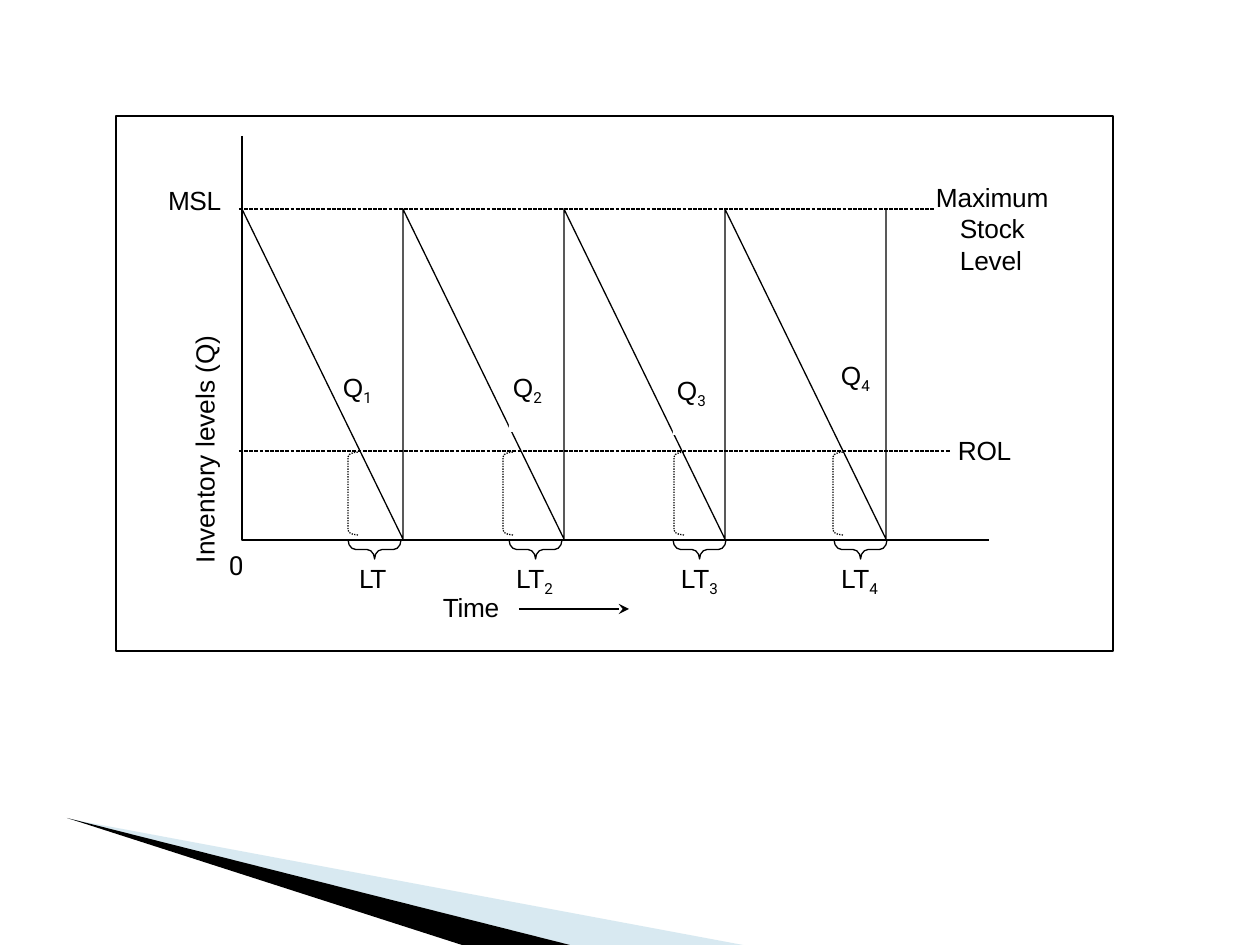
import pptx
import pptx.dml.color
import pptx.enum.dml
import pptx.enum.shapes
import pptx.oxml
import pptx.oxml.ns
import pptx.util

PX = 914400 / 126
COLORS = {"ink": "000000", "paper": "FFFFFF", "wedge": "9FCADC"}
SHAPES = pptx.enum.shapes.MSO_SHAPE
DASH = pptx.enum.dml.MSO_LINE

AXIS_X, AXIS_TOP, AXIS_Y, AXIS_END = 242, 136, 540, 989
PEAK_Y, TROUGH_Y, REORDER_Y = 209, 539, 451
CYCLE, CYCLES = 161, 4
LEAD_WIDTH = 53

# Per cycle: quantity label (x, y), dotted bracket x, lead time brace x,
# lead time label (x, width, subscript)
CYCLE_MARKS = [
    ((339, 368), 348, 348, (359, 29, "")),
    ((509, 368), 503, 509, (512, 47, "2")),
    ((673, 371), 674, 673, (677, 47, "3")),
    ((837, 356), 833, 834, (837, 47, "4")),
]


def px(n):
    return pptx.util.Emu(round(n * PX))


def rgb(name):
    return pptx.dml.color.RGBColor.from_string(COLORS[name])


def style(s, fill=None, width=None, dash=None):
    """Set fill and line; None leaves the part empty."""
    s.shadow.inherit = False
    if fill:
        s.fill.solid()
        s.fill.fore_color.rgb = rgb(fill)
    else:
        s.fill.background()
    if width:
        style_line(s.line, width, dash)
    else:
        s.line.fill.background()
    return s


def style_line(line, width, dash=None):
    line.color.rgb = rgb("ink")
    for name, value in {"width": pptx.util.Pt(width), "dash_style": dash}.items():
        setattr(line, name, value)


def add_preset(slide, kind, box, **look):
    s = slide.shapes.add_shape(kind, *(px(n) for n in box))
    return style(s, **look)


def add_outline(slide, points, close=False, **look):
    builder = slide.shapes.build_freeform(*points[0], scale=PX)
    builder.add_line_segments(points[1:], close=close)
    return style(builder.convert_to_shape(), **look)


def add_line(slide, x1, x2, y, width=0.75, dash=None):
    """Draw a level line."""
    s = slide.shapes.add_connector(
        pptx.enum.shapes.MSO_CONNECTOR.STRAIGHT, px(x1), px(y), px(x2), px(y))
    style_line(s.line, width, dash)
    s._element.spPr.append(pptx.oxml.parse_xml(
        "<a:effectLst %s/>" % pptx.oxml.ns.nsdecls("a")))
    return s


def add_arrow(slide, x1, x2, y):
    s = add_line(slide, x1, x2, y, width=1.15)
    s.line._get_or_add_ln().append(pptx.oxml.parse_xml(
        '<a:tailEnd %s type="stealth"/>' % pptx.oxml.ns.nsdecls("a")))


def add_label(slide, box, text, sub="", font="Arial", spacing=-20,
              margin=0, indent=0, top=3):
    """Add a label with an optional subscript; spacing is in 1/100 pt."""
    s = slide.shapes.add_textbox(*(px(n) for n in box))
    tf = s.text_frame
    insets = {"margin_left": 0, "margin_top": px(top), "margin_right": 0,
              "margin_bottom": 0, "word_wrap": True}
    for name, value in insets.items():
        setattr(tf, name, value)
    p = tf.paragraphs[0]
    pPr = p._p.get_or_add_pPr()
    pPr.set("marL", str(px(margin)))
    pPr.set("indent", str(px(indent)))
    runs = [(text, font, spacing, 0)]
    if sub:
        runs.append((sub, "Roboto", -40, -25000))
    for words, face, gap, baseline in runs:
        r = p.add_run()
        r.text = words
        for name, value in {"name": face, "size": pptx.util.Pt(15)}.items():
            setattr(r.font, name, value)
        r.font.color.rgb = rgb("ink")
        rPr = r._r.get_or_add_rPr()
        rPr.set("spc", str(gap))
        if baseline:
            rPr.set("baseline", str(baseline))
    return s


def add_wedges(slide):
    s = add_outline(slide, [(69, 819), (570, 945), (743, 945)], True, fill="wedge")
    color = s._element.spPr.find(".//" + pptx.oxml.ns.qn("a:srgbClr"))
    color.append(pptx.oxml.parse_xml(
        '<a:alpha %s val="40000"/>' % pptx.oxml.ns.nsdecls("a")))
    add_outline(slide, [(67, 818), (462, 945), (570, 945)], True, fill="ink")


def add_stock_curve(slide):
    points = [(AXIS_X, PEAK_Y)]
    for k in range(1, CYCLES + 1):
        x = AXIS_X + k * CYCLE
        points += [(x, TROUGH_Y), (x, PEAK_Y)]
    add_outline(slide, points, width=0.75)


def add_quantity(slide, number, x, y):
    if number > 1:
        add_preset(slide, SHAPES.RECTANGLE, (x, y + 2, 39, 62), fill="paper")
    add_label(slide, (x, y, 39, 35), "Q", str(number), margin=4)


def add_lead_time(slide, bracket_x, brace_x, label):
    s = add_preset(slide, SHAPES.LEFT_BRACKET, (bracket_x, 452, 10, 83),
                   width=0.75, dash=DASH.ROUND_DOT)
    s.adjustments[0] = 0.5
    depth = 19
    shift = (LEAD_WIDTH - depth) / 2
    s = add_preset(slide, SHAPES.RIGHT_BRACE,
                   (brace_x + shift, AXIS_Y - shift, depth, LEAD_WIDTH), width=0.75)
    s.rotation = 90
    s.adjustments[0] = 0.4
    x, width, sub = label
    add_label(slide, (x, 559, width, 35), "LT", sub,
              spacing=-20 if sub else -80, margin=4 if sub else 0)


def add_axis_title(slide):
    s = add_label(slide, (189, 333, 33, 231), "Inventory levels (Q)",
                  spacing=0, margin=1, top=0)
    s.text_frame._txBody.bodyPr.set("vert", "vert270")
    s.text_frame.paragraphs[0].line_spacing = pptx.util.Pt(17.6)


def main():
    prs = pptx.Presentation()
    prs.slide_width, prs.slide_height = px(1260), px(945)
    slide = prs.slides.add_slide(prs.slide_layouts[6])

    add_wedges(slide)
    add_outline(slide, [(AXIS_X, AXIS_TOP), (AXIS_X, AXIS_Y), (AXIS_END, AXIS_Y)],
                width=0.75)
    add_line(slide, 239, 934, PEAK_Y, dash=DASH.SQUARE_DOT)
    add_axis_title(slide)
    add_stock_curve(slide)
    add_label(slide, (936, 178, 116, 98), "Maximum Stock Level",
              spacing=-10, margin=24, indent=-24)

    for number, (quantity, *_) in enumerate(CYCLE_MARKS, 1):
        add_quantity(slide, number, *quantity)
    add_line(slide, 239, 950, REORDER_Y, dash=DASH.SQUARE_DOT)
    for _, *lead in CYCLE_MARKS:
        add_lead_time(slide, *lead)

    add_label(slide, (229, 546, 17, 35), "0", font="Roboto", spacing=-50)
    add_label(slide, (958, 431, 55, 35), "ROL")
    add_label(slide, (443, 588, 59, 35), "Time")
    add_arrow(slide, 519, 629, 609)
    add_label(slide, (168, 181, 55, 35), "MSL")
    add_preset(slide, SHAPES.RECTANGLE, (116, 116, 997, 535), width=1.15)
    prs.save("out.pptx")


if __name__ == "__main__":
    main()
